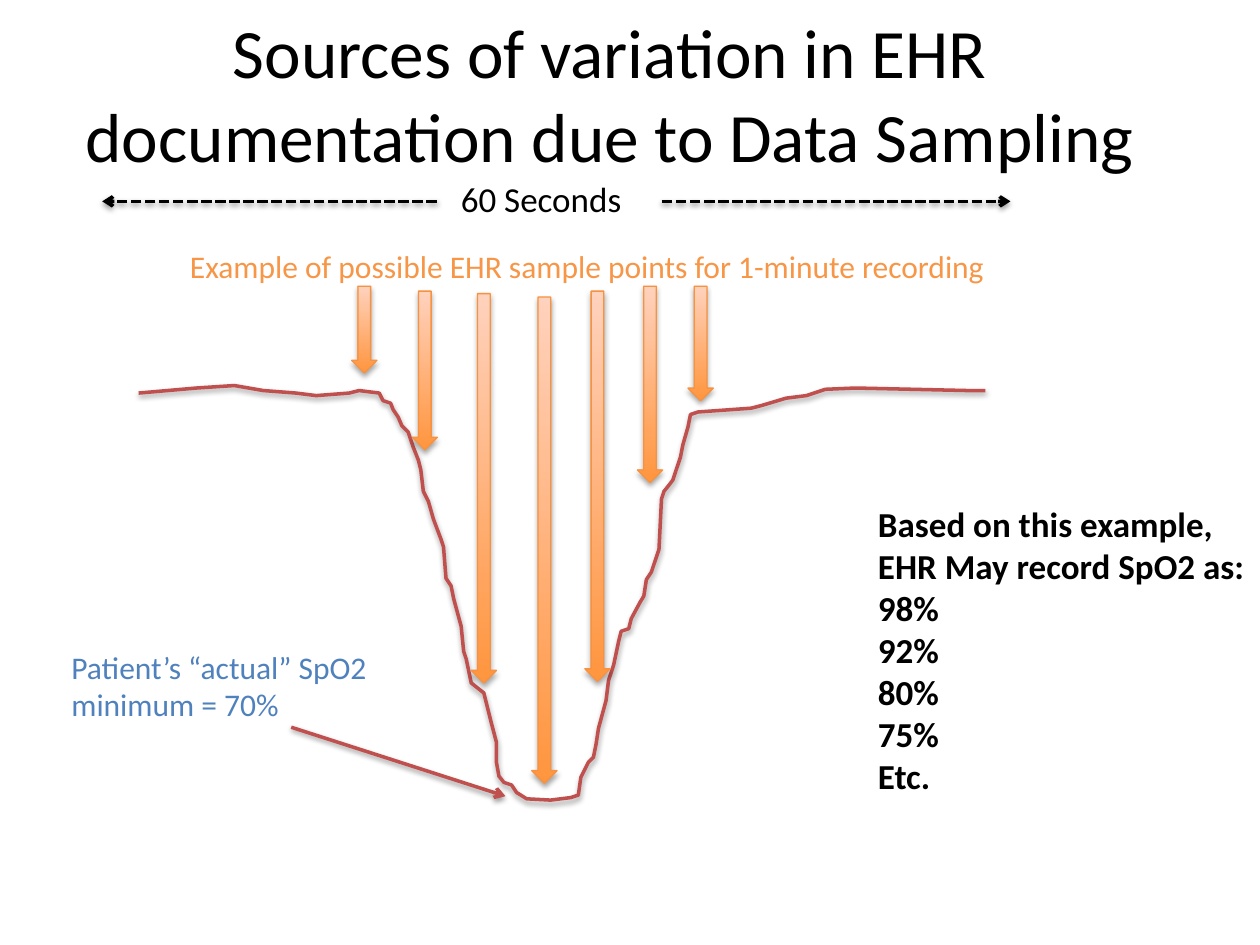
from lxml.etree import SubElement
from pptx import Presentation
from pptx.dml.color import RGBColor
from pptx.enum.dml import MSO_LINE
from pptx.enum.shapes import MSO_CONNECTOR, MSO_SHAPE
from pptx.enum.text import MSO_ANCHOR, MSO_AUTO_SIZE, PP_ALIGN
from pptx.oxml.ns import qn
from pptx.util import Cm, Pt

COLOURS = {
    "text": "000000",
    "actual": "4F81BD",
    "sample": "F79646",
    "trace": "C0504D",
    "arrow_low": "FF953E",
    "arrow_high": "FFD2BD",
    "arrow_line": "F69240",
}

# Oxygen saturation curve, in hundredths of an inch
TRACE = [
    (110, 312), (156, 308), (186, 306), (209, 310), (235, 312), (251, 314),
    (277, 312), (285, 310), (301, 312), (304, 318), (310, 320), (312, 325),
    (316, 331), (319, 338), (324, 343), (328, 355), (332, 365), (334, 373),
    (336, 390), (340, 398), (344, 412), (350, 428), (352, 434), (354, 459),
    (358, 465), (360, 475), (366, 497), (368, 517), (370, 523), (374, 542),
    (384, 550), (390, 574), (394, 589), (394, 605), (396, 616), (400, 621),
    (406, 623), (410, 629), (418, 634), (437, 635), (453, 633), (459, 631),
    (461, 617), (467, 605), (471, 601), (473, 591), (475, 578), (478, 567),
    (481, 556), (483, 540), (487, 528), (491, 509), (493, 501), (499, 499),
    (501, 491), (508, 478), (511, 473), (513, 460), (517, 454), (521, 442),
    (523, 436), (525, 396), (527, 390), (531, 385), (534, 381), (537, 372),
    (540, 363), (542, 353), (546, 339), (548, 329), (554, 327), (596, 324),
    (604, 322), (624, 316), (640, 314), (655, 309), (679, 308), (768, 310),
    (782, 310),
]

# Left, top and height of each sample arrow, in cm
SAMPLES = [
    (13.87, 5.77, 2.31), (7.09, 5.77, 1.75), (8.31, 5.87, 3.2),
    (9.5, 5.92, 7.85), (10.72, 5.99, 9.8), (11.79, 5.87, 7.87),
    (12.85, 5.77, 3.96),
]


def colour(name):
    return RGBColor.from_string(COLOURS[name])


class SlideBuilder:
    font_name = "Calibri"

    def __init__(self, page):
        self.page = page

    def format(self, paragraph, size, name, bold=False):
        font = paragraph.font
        font.name, font.size, font.bold = self.font_name, Pt(size), bold
        font.color.rgb = colour(name)

    def title(self, text, left, top, width, height):
        box = self.page.shapes.title
        box.left, box.top, box.width, box.height = map(Cm, (left, top, width, height))
        frame = box.text_frame
        frame.text = text
        frame.auto_size = MSO_AUTO_SIZE.NONE
        frame.vertical_anchor = MSO_ANCHOR.MIDDLE
        paragraph = frame.paragraphs[0]
        paragraph.alignment = PP_ALIGN.CENTER
        self.format(paragraph, 39.6, "text")

    def label(self, lines, left, top, width, height, size, name, bold=False):
        box = self.page.shapes.add_textbox(*map(Cm, (left, top, width, height)))
        frame = box.text_frame
        frame.word_wrap = False
        frame.auto_size = MSO_AUTO_SIZE.SHAPE_TO_FIT_TEXT
        frame.text = "\n".join(lines)
        for paragraph in frame.paragraphs:
            self.format(paragraph, size, name, bold)

    def stroke(self, shape, name, width):
        shape.line.color.rgb = colour(name)
        shape.line.width = Pt(width)

    def shadow(self, shape, distance, opacity):
        effects = SubElement(shape.element.spPr, qn("a:effectLst"))
        outer = SubElement(effects, qn("a:outerShdw"), blurRad=str(Pt(3.1)),
                           dist=str(Pt(distance)), dir="5400000", rotWithShape="0")
        black = SubElement(outer, qn("a:srgbClr"), val="000000")
        SubElement(black, qn("a:alpha"), val=str(opacity * 1000))

    def pointer(self, start, end, name, dash=None):
        line = self.page.shapes.add_connector(
            MSO_CONNECTOR.STRAIGHT, *map(Cm, start + end))
        self.stroke(line, name, 2)
        if dash is not None:
            line.line.dash_style = dash
        outline = line.element.spPr.find(qn("a:ln"))
        SubElement(outline, qn("a:tailEnd"), type="arrow")
        self.shadow(line, 1.6, 38)

    def curve(self, points, name):
        builder = self.page.shapes.build_freeform(*points[0], scale=Cm(2.54) / 100)
        builder.add_line_segments(points[1:], close=False)
        shape = builder.convert_to_shape()
        shape.fill.background()
        self.stroke(shape, name, 2)
        self.shadow(shape, 1.6, 38)

    def sample_arrow(self, left, top, height):
        arrow = self.page.shapes.add_shape(
            MSO_SHAPE.DOWN_ARROW, *map(Cm, (left, top, 0.51, height)))
        arrow.fill.gradient()
        arrow.fill.gradient_angle = 90
        stops = arrow.fill.gradient_stops
        for stop, position, name in zip(stops, (0, 1), ("arrow_low", "arrow_high")):
            stop.position = position
            stop.color.rgb = colour(name)
        self.stroke(arrow, "arrow_line", 0.75)
        self.shadow(arrow, 1.8, 35)


def main():
    deck = Presentation()
    deck.slide_width, deck.slide_height = Cm(25.4), Cm(19.05)
    slide = SlideBuilder(deck.slides.add_slide(deck.slide_layouts[5]))

    slide.title("Sources of variation in EHR documentation due to Data Sampling",
                0.86, 0.28, 22.86, 3.18)

    # Saturation curve and its true minimum
    slide.curve(TRACE, "trace")
    slide.label(["Patient’s “actual” SpO2", "minimum = 70%"],
                1.19, 12.93, 6.58, 1.8, 18, "actual")
    slide.pointer((5.87, 14.66), (10.19, 16.05), "trace")

    # Possible sample points
    for sample in SAMPLES:
        slide.sample_arrow(*sample)

    # Time span
    slide.label(["60 Seconds"], 9.04, 3.45, 3.78, 1.12, 20, "text")
    for start, end in ((13.34, 20.37), (8.81, 2.06)):
        slide.pointer((start, 4.06), (end, 4.06), "text", MSO_LINE.SQUARE_DOT)

    # Explanations
    slide.label(["Example of possible EHR sample points for 1-minute recording"],
                3.58, 4.85, 16.74, 1.02, 18, "sample")
    slide.label(["Based on this example,", "EHR May record SpO2 as:",
                 "98%", "92%", "80%", "75%", "Etc."],
                17.45, 10.01, 8, 6.25, 20, "text", bold=True)

    deck.save("out.pptx")


if __name__ == "__main__":
    main()
